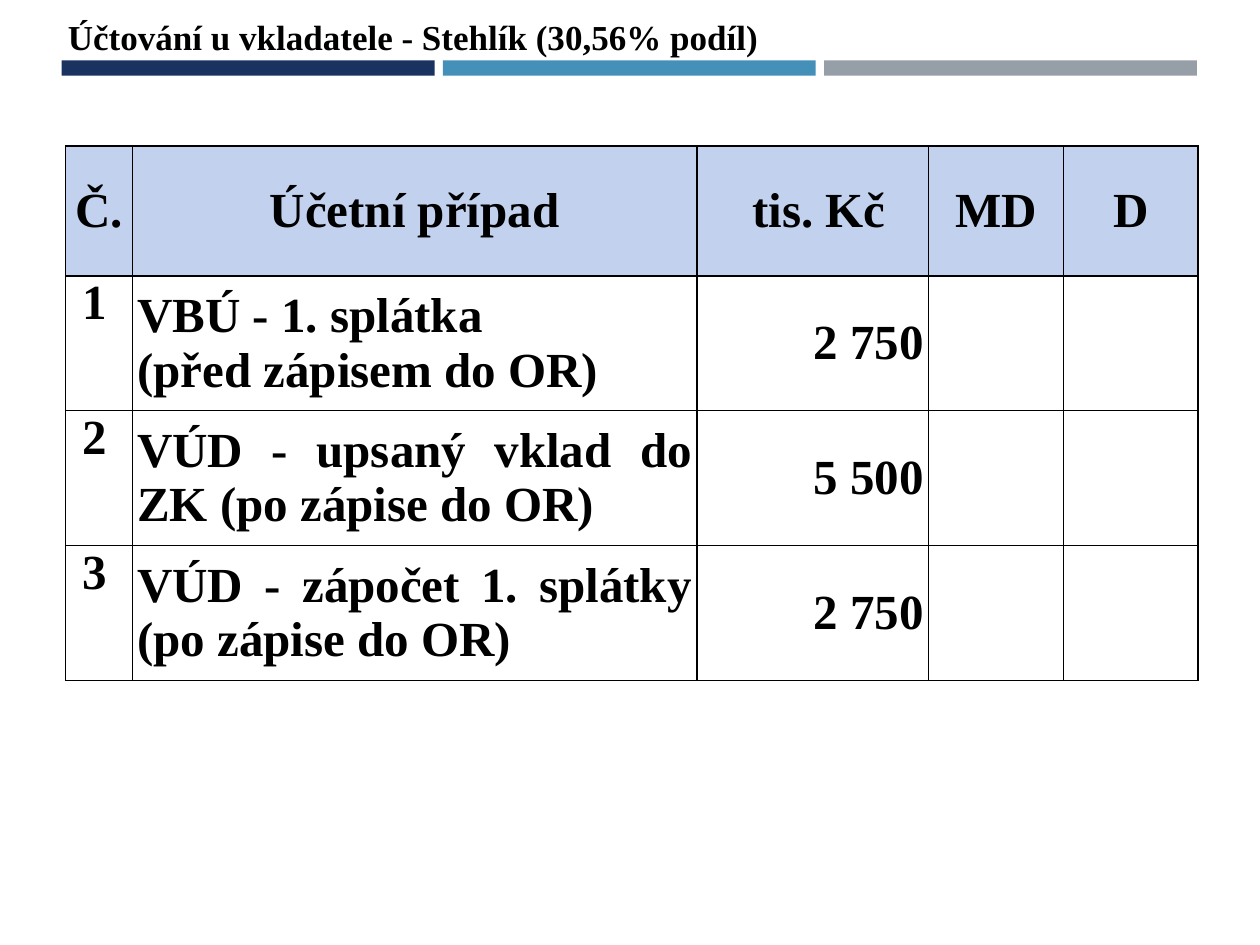
"""Build the slide with the depositor's bookkeeping entries."""
from lxml.etree import SubElement
from pptx import Presentation
from pptx.dml.color import RGBColor
from pptx.enum.shapes import MSO_SHAPE as Shape
from pptx.enum.text import MSO_ANCHOR as Anchor, MSO_AUTO_SIZE as AutoSize, PP_ALIGN as Align
from pptx.oxml.ns import qn
from pptx.util import Inches, Pt

COLORS = {"navy": "1A3260", "blue": "4590B8", "gray": "969FA7",
          "header": "C2D1EE", "ink": "000000"}
FONT = "Times New Roman"
COLUMN_WIDTHS = [0.53, 4.48, 1.84, 1.07, 1.07]
ROW_HEIGHTS = [1.03, 1.07, 1.07, 1.07]
COLUMN_ALIGNS = [Align.LEFT, Align.JUSTIFY, Align.RIGHT, Align.LEFT, Align.LEFT]
ENTRIES = [
    ["Č.", "Účetní případ", " tis. Kč", "MD", "D"],
    [" 1", "VBÚ - 1. splátka \n(před zápisem do OR)", "2 750", "", ""],
    [" 2", "VÚD - upsaný vklad do ZK (po zápise do OR)", "5 500", "", ""],
    [" 3", "VÚD - zápočet 1. splátky (po zápise do OR)", " 2 750", "", ""],
]


def rgb(name):
    return RGBColor.from_string(COLORS[name])


def write_text(frame, text, size, align):
    frame.text = text
    for paragraph in frame.paragraphs:
        paragraph.alignment = align
        for run in paragraph.runs:
            run.font.name = FONT
            run.font.size = Pt(size)
            run.font.bold = True
            run.font.color.rgb = rgb("ink")


def add_bar(slide, left, color):
    bar = slide.shapes.add_shape(Shape.RECTANGLE, Inches(left), Inches(0.48),
                                 Inches(2.96), Inches(0.12))
    bar.shadow.inherit = False
    bar.fill.solid()
    bar.fill.fore_color.rgb = rgb(color)
    bar.line.fill.background()


def add_heading(slide, text):
    heading = slide.shapes.add_textbox(Inches(0.44), Inches(0.07), Inches(5.72), Inches(0.44))
    frame = heading.text_frame
    frame.word_wrap = False
    frame.auto_size = AutoSize.SHAPE_TO_FIT_TEXT
    write_text(frame, text, 20, Align.LEFT)


def add_borders(cell):
    properties = cell._tc.get_or_add_tcPr()
    for position, side in enumerate(("lnL", "lnR", "lnT", "lnB")):
        border = SubElement(properties, qn(f"a:{side}"), w=str(Pt(1)))
        fill = SubElement(border, qn("a:solidFill"))
        SubElement(fill, qn("a:srgbClr"), val=COLORS["ink"])
        properties.insert(position, border)


def format_cell(cell, text, row, column):
    is_header = row == 0
    cell.margin_left = cell.margin_right = Inches(0.04)
    cell.margin_top = cell.margin_bottom = 0
    cell.vertical_anchor = Anchor.MIDDLE if is_header or column else Anchor.TOP
    write_text(cell.text_frame, text, 28,
               Align.CENTER if is_header else COLUMN_ALIGNS[column])
    if is_header:
        cell.fill.solid()
        cell.fill.fore_color.rgb = rgb("header")
    else:
        cell.fill.background()
    add_borders(cell)


def add_entries_table(slide):
    table = slide.shapes.add_table(
        len(ROW_HEIGHTS), len(COLUMN_WIDTHS), Inches(0.52), Inches(1.16),
        Inches(sum(COLUMN_WIDTHS)), Inches(sum(ROW_HEIGHTS))).table
    table.horz_banding = False
    for column, width in zip(table.columns, COLUMN_WIDTHS):
        column.width = Inches(width)
    for row, height in zip(table.rows, ROW_HEIGHTS):
        row.height = Inches(height)
    for row, entry in enumerate(ENTRIES):
        for column, text in enumerate(entry):
            format_cell(table.cell(row, column), text, row, column)


def main():
    deck = Presentation()
    deck.slide_width, deck.slide_height = Inches(10), Inches(7.5)
    slide = deck.slides.add_slide(deck.slide_layouts[6])
    for index, color in enumerate(("navy", "blue", "gray")):
        add_bar(slide, 0.49 + index * 3.025, color)
    add_heading(slide, "Účtování u vkladatele - Stehlík (30,56% podíl)")
    add_entries_table(slide)
    deck.save("out.pptx")


if __name__ == "__main__":
    main()
